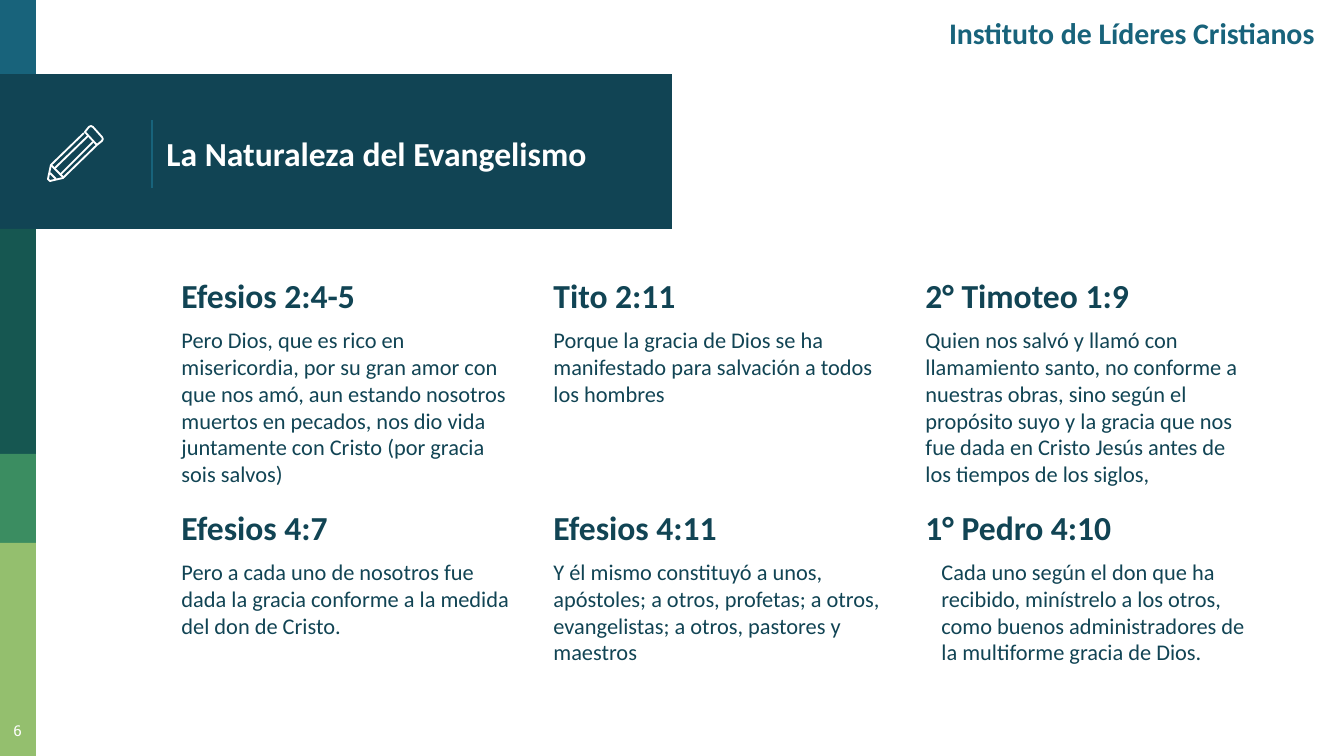
import copy

from pptx import Presentation
from pptx import util as u
from pptx.dml.color import RGBColor
from pptx.enum import shapes, text
from pptx.oxml import ns
from lxml import etree

WHITE = RGBColor(0xFF, 0xFF, 0xFF)
NAVY = RGBColor(0x11, 0x44, 0x54)
BLUE = RGBColor(0x18, 0x63, 0x7B)
TEAL = RGBColor(0x16, 0x57, 0x51)
GREEN = RGBColor(0x3B, 0x8D, 0x61)
LIME = RGBColor(0x94, 0xBF, 0x6E)

SCALE = 914400 / 134.4  # EMU per px
TOP, MIDDLE = text.MSO_ANCHOR.TOP, text.MSO_ANCHOR.MIDDLE
LEFT, CENTER, RIGHT = text.PP_ALIGN.LEFT, text.PP_ALIGN.CENTER, text.PP_ALIGN.RIGHT

HEADING = dict(name="Calibri", size=u.Pt(18), bold=True)
VERSE = dict(name="Calibri", size=u.Pt(12), bold=False)
SCHOOL = dict(name="Calibri", size=u.Pt(16), bold=True)
NUMBER = dict(name="Roboto Slab", size=u.Pt(8), bold=False)

# Left, top, width, height, colour
BARS = [
    (0, 0, 36, 78, BLUE),
    (0, 74, 672, 155, NAVY),
    (0, 229, 36, 225, TEAL),
    (0, 454, 36, 89, GREEN),
    (0, 543, 36, 213, LIME),
]

# Outline points of each pencil part, and whether it is closed
PENCIL = [
    ([(85, 132), (89, 127), (91, 126), (93, 127), (102, 137), (103, 139),
      (102, 141), (97, 145)], True),
    ([(93, 142), (60, 175)], False),
    ([(84, 133), (51, 165), (48, 179), (49, 180), (50, 181), (63, 178),
      (97, 145)], False),
    ([(55, 168), (88, 136)], False),
    ([(56, 179), (50, 173)], False),
    ([(51, 165), (64, 178)], False),
]

# Reference, passage, passage indent
VERSES = [
    ("Efesios 2:4-5", "Pero Dios, que es rico en misericordia, por su gran amor con que nos amó, "
     "aun estando nosotros muertos en pecados, nos dio vida juntamente con Cristo "
     "(por gracia sois salvos)", 0),
    ("Tito 2:11", "Porque la gracia de Dios se ha manifestado para salvación a todos los hombres", 0),
    ("2° Timoteo 1:9", "Quien nos salvó y llamó con llamamiento santo, no conforme a nuestras obras, "
     "sino según el propósito suyo y la gracia que nos fue dada en Cristo Jesús antes de "
     "los tiempos de los siglos,", 0),
    ("Efesios 4:7", "Pero a cada uno de nosotros fue dada la gracia conforme a la medida del don de Cristo.", 0),
    ("Efesios 4:11", "Y él mismo constituyó a unos, apóstoles; a otros, profetas; a otros, "
     "evangelistas; a otros, pastores y maestros", 0),
    ("1° Pedro 4:10", "Cada uno según el don que ha recibido, minístrelo a los otros, como buenos "
     "administradores de la multiforme gracia de Dios.", 16),
]
COLUMNS = 3


def px(length):
    return u.Emu(round(length * SCALE))


def assign(target, values):
    for name, value in values.items():
        setattr(target, name, value)


def repeat_body(layout, count):
    """Give the layout `count` body placeholders."""
    body = layout.placeholders[1].element
    for number in range(1, count):
        twin = copy.deepcopy(body)
        twin.xpath(".//p:cNvPr")[0].set("id", str(100 + number))
        twin.xpath(".//p:ph")[0].set("idx", str(100 + number))
        body.getparent().append(twin)


class Painter:
    def __init__(self, page):
        self.page = page

    def bar(self, left, top, width, height, color):
        box = self.page.shapes.add_shape(
            shapes.MSO_SHAPE.RECTANGLE, px(left), px(top), px(width), px(height))
        box.shadow.inherit = False
        box.fill.solid()
        box.fill.fore_color.rgb = color
        box.line.fill.background()

    def rule(self, x1, y1, x2, y2, color):
        line = self.page.shapes.add_connector(
            shapes.MSO_CONNECTOR.STRAIGHT, px(x1), px(y1), px(x2), px(y2))
        line.line.color.rgb = color
        line.line.width = u.Pt(0.75)
        etree.SubElement(line.element.spPr, ns.qn("a:effectLst"))

    def icon(self, parts):
        group = self.page.shapes.add_group_shape()
        for points, closed in parts:
            builder = group.shapes.build_freeform(*points[0], scale=SCALE)
            builder.add_line_segments(points[1:], close=closed)
            outline = builder.convert_to_shape()
            outline.shadow.inherit = False
            outline.fill.background()
            outline.line.color.rgb = WHITE
            outline.line.width = u.Pt(1)

    def frame(self, box, area, anchor):
        names = ("left", "top", "width", "height")
        assign(box, dict(zip(names, map(px, area))))
        inset = u.Inches(0.1)
        assign(box.text_frame, dict(
            word_wrap=True, auto_size=text.MSO_AUTO_SIZE.NONE, vertical_anchor=anchor,
            margin_left=inset, margin_right=inset, margin_top=inset, margin_bottom=inset))

    def fill_para(self, para, words, style, color, align=LEFT, before=0, indent=0):
        properties = para._p.get_or_add_pPr()
        properties.set("marL", str(px(indent)))
        properties.set("indent", "0")
        etree.SubElement(properties, ns.qn("a:buNone"))
        assign(para, dict(alignment=align, space_before=u.Pt(before)))
        span = para.add_run()
        span.text = words
        assign(span.font, style)
        span.font.color.rgb = color

    def label(self, words, area, style, color, align):
        box = self.page.shapes.add_textbox(*map(px, area))
        self.frame(box, area, TOP)
        self.fill_para(box.text_frame.paragraphs[0], words, style, color, align)

    def raise_to_front(self, box):
        box.element.getparent().append(box.element)

    def title(self, words, area):
        box = self.page.shapes.title
        self.raise_to_front(box)
        self.frame(box, area, MIDDLE)
        self.fill_para(box.text_frame.paragraphs[0], words, HEADING, WHITE)

    def verse(self, box, area, heading, passage, indent):
        self.raise_to_front(box)
        self.frame(box, area, TOP)
        self.fill_para(box.text_frame.paragraphs[0], heading, HEADING, NAVY)
        self.fill_para(box.text_frame.add_paragraph(), passage, VERSE, NAVY,
                       before=6, indent=indent)


def main():
    deck = Presentation()
    deck.slide_width, deck.slide_height = px(1344), px(756)
    layout = deck.slide_layouts[1]
    repeat_body(layout, len(VERSES))
    page = deck.slides.add_slide(layout)
    painter = Painter(page)
    bodies = [box for box in page.placeholders if box.placeholder_format.idx > 0]

    # Side stripe and title band
    for bar in BARS:
        painter.bar(*bar)
    painter.rule(152, 120, 152, 188, BLUE)
    painter.title("La Naturaleza del Evangelismo", (153, 78, 524, 150))

    # Grid of Bible verses
    for index, (box, verse) in enumerate(zip(bodies, VERSES)):
        row, column = divmod(index, COLUMNS)
        painter.verse(box, (168 + 372 * column, 261 + 232 * row, 355, 192), *verse)

    # Pencil, page number and school name
    painter.icon(PENCIL)
    painter.label("6", (-8, 708, 51, 47), NUMBER, WHITE, CENTER)
    painter.label("Instituto de Líderes Cristianos", (831, 1, 497, 62), SCHOOL, BLUE, RIGHT)

    deck.save("out.pptx")


if __name__ == "__main__":
    main()
